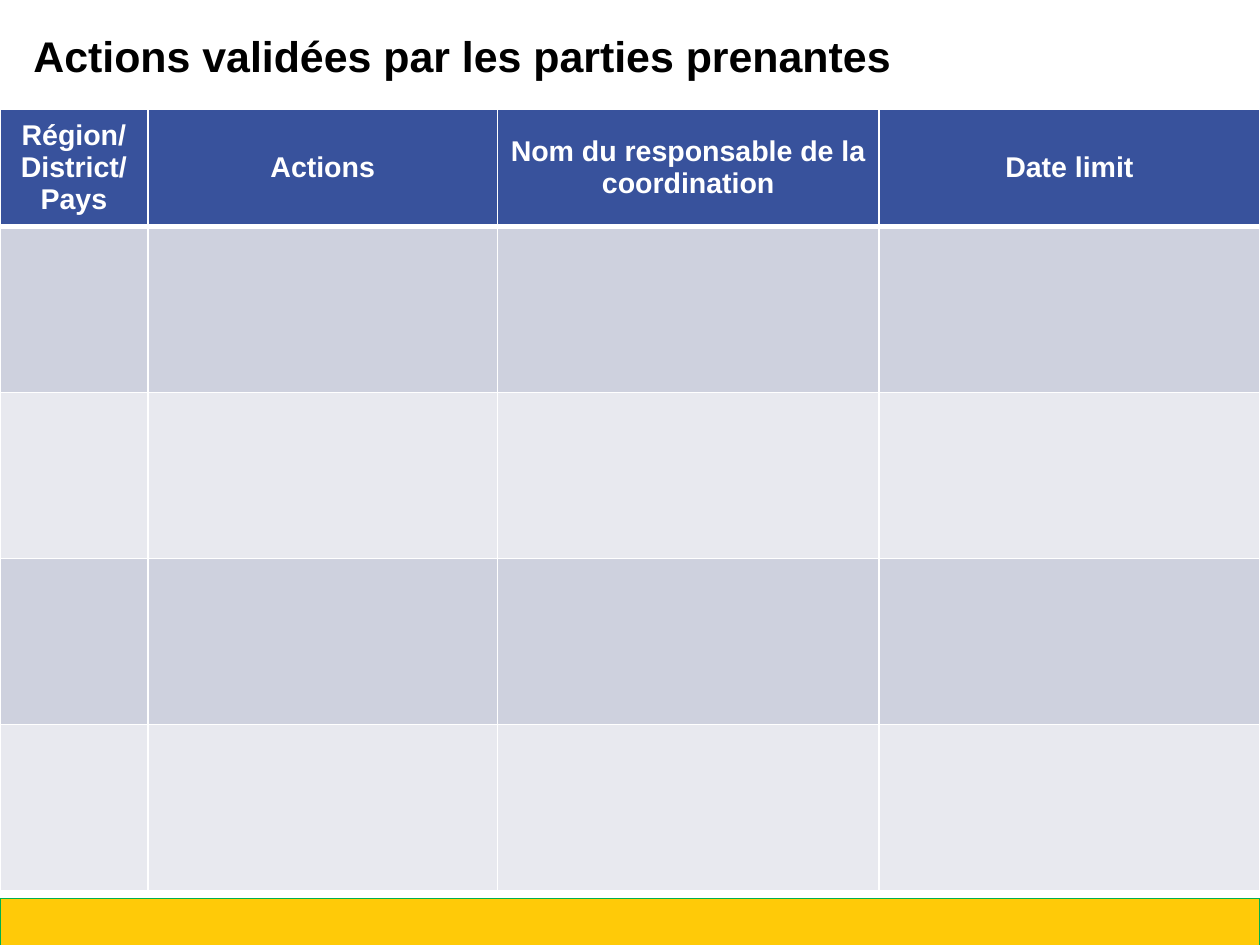
from dataclasses import dataclass

from lxml.etree import SubElement
from pptx import Presentation
from pptx.dml.color import RGBColor as RGB
from pptx.enum.shapes import MSO_SHAPE as Preset
from pptx.enum.text import MSO_ANCHOR as Anchor, PP_ALIGN as Align
from pptx.oxml.ns import qn
from pptx.util import Cm, Pt

TITLE = "Actions validées par les parties prenantes"
COLUMNS = [
    ("Région/District/Pays", 2.92),
    ("Actions", 6.91),
    ("Nom du responsable de la coordination", 7.53),
    ("Date limit", 7.53),
]
ACTION_ROWS = 4


@dataclass(frozen=True)
class Theme:
    font: str = "Arial"
    title_size: int = 24
    header_size: int = 16
    title: str = "000000"
    header_text: str = "FFFFFF"
    header_fill: str = "38529C"
    bands: tuple = ("CED1DE", "E8E9EF")
    grid: str = "FFFFFF"
    footer_fill: str = "FFCA08"
    footer_line: str = "00B050"


THEME = Theme()
SLIDE_W, SLIDE_H = 24.89, 18.67
TABLE_TOP = 2.16
HEADER_H, ACTION_H = 2.31, 3.28
FOOTER_TOP, FOOTER_H = 17.75, 0.94


def style_text(paragraph, size, color):
    for run in paragraph.runs:
        run.font.name = THEME.font
        run.font.size = Pt(size)
        run.font.bold = True
        run.font.color.rgb = RGB.from_string(color)


def style_cell(cell, fill, bottom=1):
    properties = cell._tc.get_or_add_tcPr()
    for side, width in (("L", 1), ("R", 1), ("T", 1), ("B", bottom)):
        border = SubElement(properties, qn(f"a:ln{side}"), w=str(Pt(width)))
        paint = SubElement(border, qn("a:solidFill"))
        SubElement(paint, qn("a:srgbClr"), val=THEME.grid)
    cell.fill.solid()
    cell.fill.fore_color.rgb = RGB.from_string(fill)


def add_footer(slide):
    footer = slide.shapes.add_shape(
        Preset.RECTANGLE, 0, Cm(FOOTER_TOP), Cm(SLIDE_W), Cm(FOOTER_H))
    footer.shadow.inherit = False
    footer.fill.solid()
    footer.fill.fore_color.rgb = RGB.from_string(THEME.footer_fill)
    footer.line.color.rgb = RGB.from_string(THEME.footer_line)
    footer.line.width = Pt(0.75)


def add_title(slide):
    title = slide.shapes.add_textbox(Cm(0.41), Cm(0.46), Cm(18.42), Cm(1.27))
    title.text_frame.word_wrap = True
    title.text_frame.text = TITLE
    style_text(title.text_frame.paragraphs[0], THEME.title_size, THEME.title)


def add_actions(slide):
    table_h = HEADER_H + ACTION_ROWS * ACTION_H
    actions = slide.shapes.add_table(
        ACTION_ROWS + 1, len(COLUMNS),
        0, Cm(TABLE_TOP), Cm(SLIDE_W), Cm(table_h)).table
    for row in actions.rows:
        row.height = Cm(ACTION_H)
    actions.rows[0].height = Cm(HEADER_H)
    for col, (heading, width) in enumerate(COLUMNS):
        actions.columns[col].width = Cm(width)
        header = actions.cell(0, col)
        header.text_frame.text = heading
        header.vertical_anchor = Anchor.MIDDLE
        paragraph = header.text_frame.paragraphs[0]
        paragraph.alignment = Align.CENTER
        style_text(paragraph, THEME.header_size, THEME.header_text)
        style_cell(header, THEME.header_fill, bottom=3)
        for row in range(ACTION_ROWS):
            band = THEME.bands[row % len(THEME.bands)]
            style_cell(actions.cell(row + 1, col), band)


def main():
    deck = Presentation()
    deck.slide_width, deck.slide_height = Cm(SLIDE_W), Cm(SLIDE_H)
    slide = deck.slides.add_slide(deck.slide_layouts[6])
    add_footer(slide)
    add_title(slide)
    add_actions(slide)
    deck.save("out.pptx")


if __name__ == "__main__":
    main()
